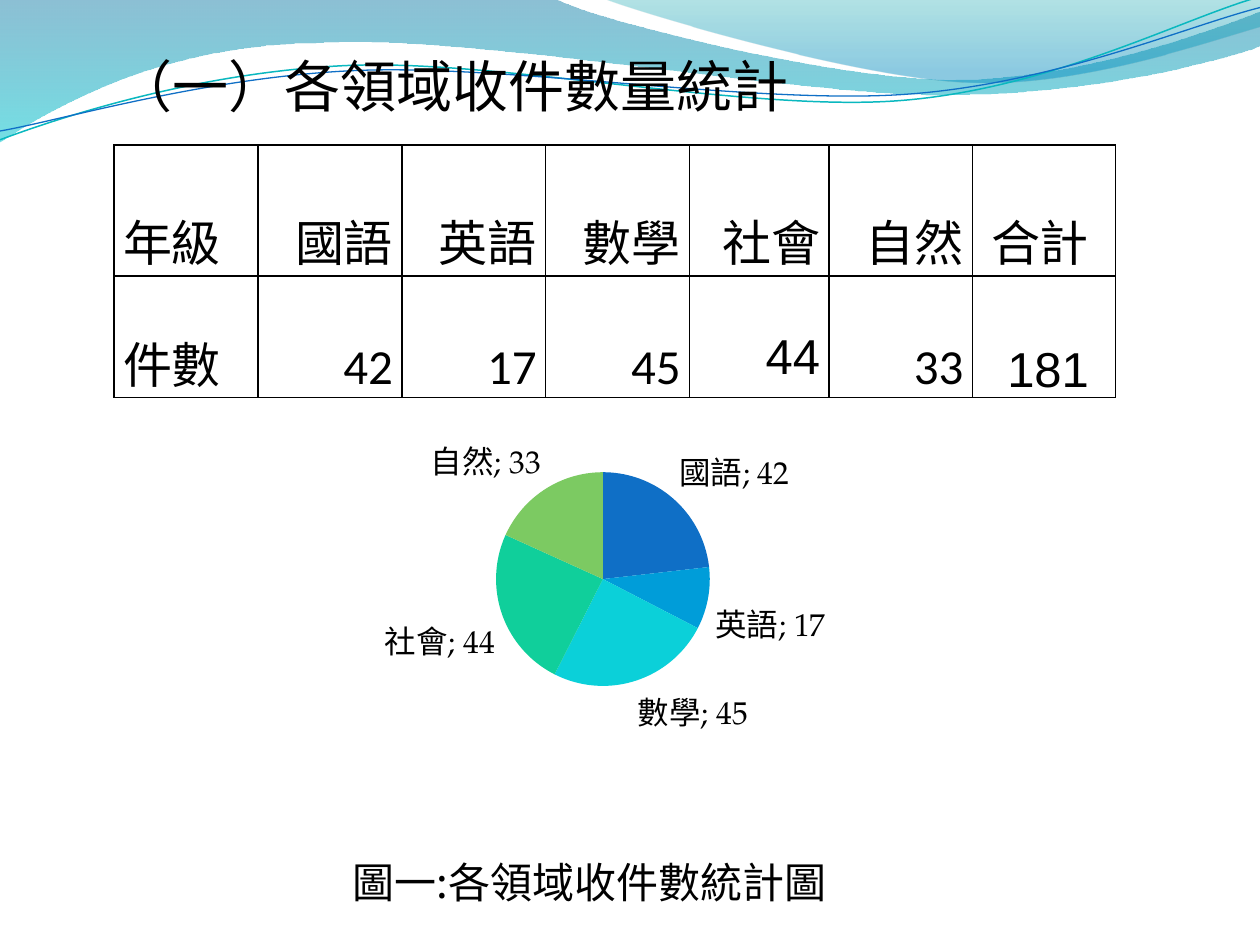
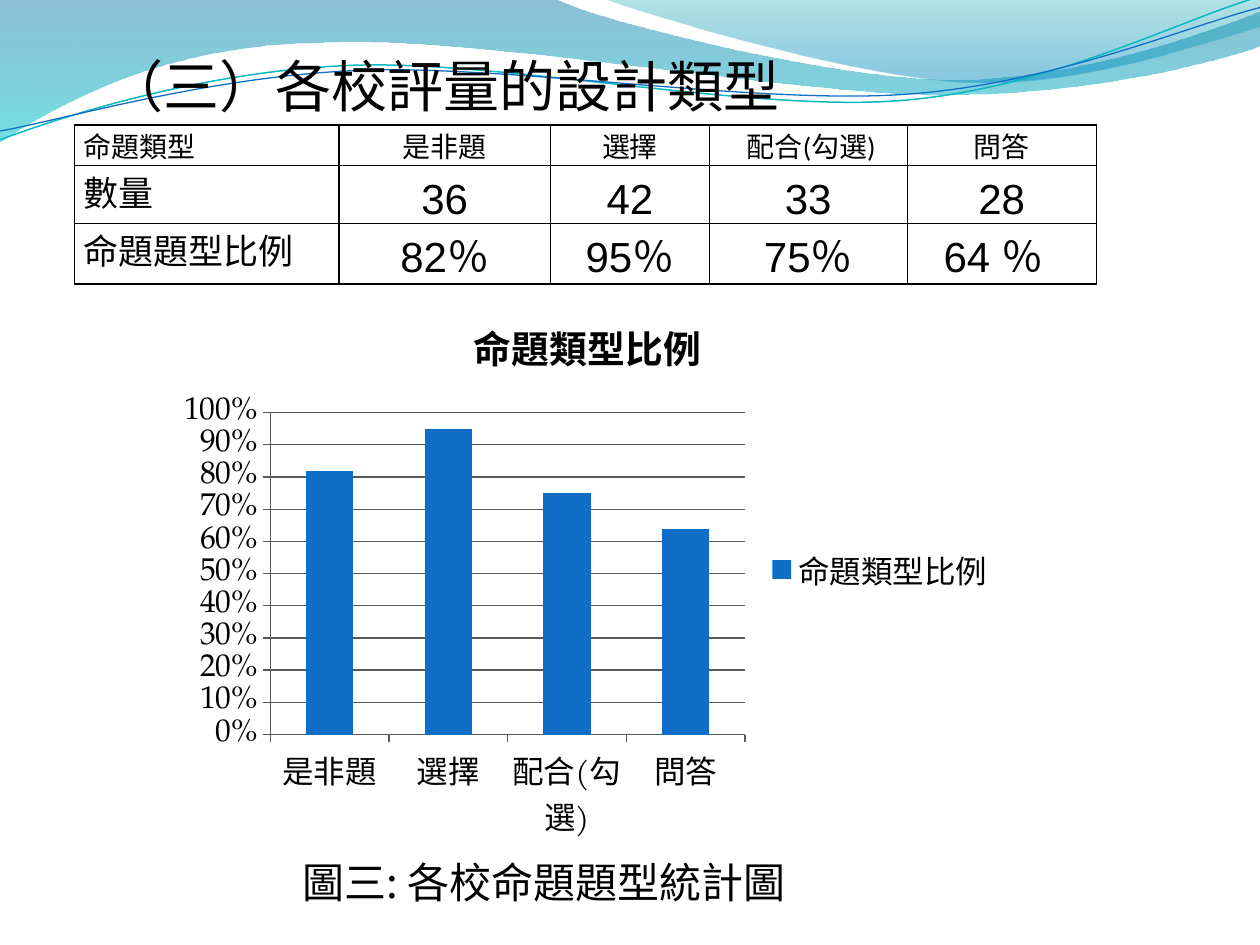
from lxml.etree import SubElement
from pptx import Presentation
from pptx.chart.data import CategoryChartData
from pptx.dml.color import RGBColor
from pptx.enum.chart import XL_CHART_TYPE as ChartType
from pptx.enum.chart import XL_LABEL_POSITION as LabelPos
from pptx.enum.chart import XL_LEGEND_POSITION as LegendPos
from pptx.enum.chart import XL_TICK_MARK as Tick
from pptx.enum.text import MSO_ANCHOR as Anchor
from pptx.enum.text import PP_ALIGN as Align
from pptx.oxml import parse_xml
from pptx.oxml.ns import nsdecls, qn
from pptx.util import Cm, Pt

BLACK = RGBColor(0x00, 0x00, 0x00)
GRID_GREY = RGBColor(0x59, 0x59, 0x59)
BLUE = RGBColor(0x0F, 0x6F, 0xC6)
SKY = RGBColor(0x00, 0x9D, 0xD9)
CYAN = RGBColor(0x0B, 0xD0, 0xD9)
GREEN = RGBColor(0x10, 0xCF, 0x9B)
LIME = RGBColor(0x7C, 0xCA, 0x62)
TEAL_LINE = RGBColor(0x0A, 0xB8, 0xBF)
DEEP_BLUE = RGBColor(0x00, 0x74, 0xA1)
TURQUOISE = RGBColor(0x00, 0xC6, 0xCF)
DEEP_TEAL = RGBColor(0x00, 0xA1, 0xA9)
SEA_BLUE = RGBColor(0x00, 0x8B, 0xBF)

CJK, SANS, BODY, SERIF = "Noto Sans CJK TC", "Arial", "Calibri", "TeX Gyre Pagella"
SLIDE_W, SLIDE_H = 25.4, 19.05
CELL_INSET = 0.18

# Waves in tenths of the slide width: two numbers draw a line, six a curve
BANDS = [
    ([(0, -.01), (4.4, -.01), (4.76, .17, 6.64, .63, 7.58, .63),
      (8.53, .63, 9.58, .26, 10, .09), (10.01, .36),
      (9.83, .44, 8.7, .76, 7.46, .75), (6.22, .75, 3.82, .28, 2.57, .34),
      (1.29, .35, .46, .83, -.01, 1.13)],
     [(0, DEEP_BLUE, 45), (1, TURQUOISE, 55)]),
    ([(4.79, -.01), (5.09, .11, 6.82, .62, 7.69, .65),
      (8.56, .69, 9.61, .32, 10, .21), (10, 0)],
     [(0, DEEP_TEAL, 30), (.8, SEA_BLUE, 45)]),
]
STRANDS = [
    ([(0, 1.11), (.48, .93, 1.58, .57, 2.77, .52),
      (3.95, .47, 5.93, .89, 7.13, .8), (8.33, .71, 9.38, .15, 9.98, -.02)],
     TEAL_LINE, 0.85),
    ([(0, 1.04), (.47, .96, 1.64, .61, 2.83, .56),
      (4.03, .51, 5.97, .83, 7.17, .75), (8.36, .67, 9.41, .21, 10, .06)],
     BLUE, 0.75),
]


def apply(target, formats):
    for name, value in formats.items():
        setattr(target, name, value)


def box_cm(box):
    return [Cm(length) for length in box]


# ---- wave header ----
def add_wave(slide, box, steps, close):
    left, top, width = box
    points = [(Cm(left + x * width / 10), Cm(top + y * width / 10))
              for step in steps for x, y in zip(step[::2], step[1::2])]
    builder = slide.shapes.build_freeform(*points[0])
    builder.add_line_segments(points[1:], close=close)
    wave = builder.convert_to_shape()
    wave.shadow.inherit = False
    # Join each three segments of a curve into one Bezier
    segments = list(wave.element.iter(qn("a:lnTo")))
    for step in steps[1:]:
        count = len(step) // 2
        if count == 3:
            curve = parse_xml(f'<a:cubicBezTo {nsdecls("a")}/>')
            segments[0].addprevious(curve)
            for segment in segments[:count]:
                curve.append(segment[0])
                segment.getparent().remove(segment)
        segments = segments[count:]
    return wave


def add_wave_header(slide, box=(0, 0, SLIDE_W)):
    waves = []
    for steps, stops in BANDS:
        band = add_wave(slide, box, steps, True)
        band.line.fill.background()
        band.fill.gradient()
        band.fill.gradient_angle = 270
        for stop, (position, colour, _) in zip(band.fill.gradient_stops, stops):
            stop.position = position
            stop.color.rgb = colour
        for clr, (_, _, opacity) in zip(band.element.iter(qn("a:srgbClr")), stops):
            SubElement(clr, qn("a:alpha"), val=str(opacity * 1000))
        waves.append(band)
    for steps, colour, weight in STRANDS:
        strand = add_wave(slide, box, steps, False)
        strand.fill.background()
        strand.line.color.rgb = colour
        strand.line.width = Pt(weight)
        waves.append(strand)
    return waves


def share_on_master(master, waves):
    """Move the waves behind everything else on the slide master."""
    tree = master.shapes.element
    for i, wave in enumerate(waves):
        wave.element.nvSpPr.cNvPr.set("id", str(101 + i))
        tree.insert(2 + i, wave.element)


# ---- text ----
def write(paragraph, text, size, font=CJK, align=Align.LEFT):
    paragraph.alignment = align
    run = paragraph.add_run()
    run.text = text
    apply(run.font, {"size": Pt(size), "name": font})
    run.font.color.rgb = BLACK
    SubElement(run._r.get_or_add_rPr(), qn("a:ea"), typeface=CJK)


def add_line_of_text(slide, box, text, size):
    frame = slide.shapes.add_textbox(*box_cm(box)).text_frame
    apply(frame, {"word_wrap": True, "vertical_anchor": Anchor.MIDDLE})
    write(frame.paragraphs[0], text, size)


def add_title(slide, left, text):
    add_line_of_text(slide, (left, 0.82, 18.2, 1.8), text, 32)


def add_caption(slide, left, text):
    add_line_of_text(slide, (left, 17.14, 13, 1.27), text, 24)


# ---- tables ----
def outline(cell):
    properties = cell._tc.get_or_add_tcPr()
    for i, side in enumerate(("lnL", "lnR", "lnT", "lnB")):
        properties.insert(i, parse_xml(
            f'<a:{side} {nsdecls("a")} w="12700"><a:solidFill>'
            f'<a:srgbClr val="{BLACK}"/></a:solidFill></a:{side}>'))


def add_grid(slide, corner, widths, heights, rows, style):
    """style(row, column) gives size, font, alignment and cell formats."""
    box = (*corner, sum(widths), sum(heights))
    grid = slide.shapes.add_table(len(rows), len(widths), *box_cm(box)).table
    apply(grid, {"first_row": False, "horz_banding": False})
    for column, width in zip(grid.columns, widths):
        column.width = Cm(width)
    for row, height in zip(grid.rows, heights):
        row.height = Cm(height)
    for r, texts in enumerate(rows):
        for c, text in enumerate(texts):
            size, font, align, formats = style(r, c)
            cell = grid.cell(r, c)
            apply(cell, {"margin_left": Cm(CELL_INSET), "margin_right": Cm(CELL_INSET),
                         "margin_top": 0, "margin_bottom": 0,
                         "vertical_anchor": Anchor.BOTTOM, **formats})
            write(cell.text_frame.paragraphs[0], text, size, font, align)
            cell.fill.background()
            outline(cell)


def count_style(r, c):
    formats = {}
    if c == 6:
        formats["margin_right"] = Cm(0.54)
    if (r, c) == (1, 4):
        formats["margin_bottom"] = Cm(0.26)
    font = SANS if r == 1 and c in (4, 6) else BODY
    return 28, font, Align.RIGHT if c else Align.LEFT, formats


def type_style(r, c):
    if c == 0:
        return 20 if r else 16, CJK, Align.LEFT, {"vertical_anchor": Anchor.TOP}
    formats = {(0, 3): {"margin_left": Cm(0.3)},
               (2, 4): {"margin_right": Cm(0.5)}}.get((r, c), {})
    return (24, SANS, Align.CENTER, formats) if r else (16, BODY, Align.CENTER, formats)


# ---- charts ----
def add_data_chart(slide, kind, box, plot_box, series_name, names, values, number_format):
    """plot_box is measured in cm from the corner of the chart box."""
    data = CategoryChartData(number_format=number_format)
    data.categories = names
    data.add_series(series_name, values)
    chart = slide.shapes.add_chart(kind, *box_cm(box), data).chart
    apply(chart.font, {"size": Pt(18), "name": SERIF})
    chart.font.color.rgb = BLACK
    area = chart.element.find(".//" + qn("c:plotArea"))
    for old in area.findall(qn("c:layout")):
        area.remove(old)
    places = "".join(f'<c:{key} val="{length / whole}"/>'
                     for key, length, whole in zip("xywh", plot_box, box[2:] * 2))
    area.insert(0, parse_xml(
        f'<c:layout {nsdecls("c")}><c:manualLayout><c:layoutTarget val="inner"/>'
        f'<c:xMode val="edge"/><c:yMode val="edge"/>{places}'
        '</c:manualLayout></c:layout>'))
    return chart


def add_subject_pie(slide, box, names, values):
    chart = add_data_chart(slide, ChartType.PIE, box, (7.69, 1.19, 4.31, 4.31),
                           "Series 1", names, values, "General")
    apply(chart, {"has_legend": False, "has_title": False})
    chart.plots[0].vary_by_categories = True
    pieces = chart.plots[0].series[0]
    for i, colour in enumerate((BLUE, SKY, CYAN, GREEN, LIME)):
        fill = pieces.points[i].format.fill
        fill.solid()
        fill.fore_color.rgb = colour
    apply(pieces.data_labels,
          {"show_value": True, "show_category_name": True,
           "show_percentage": False, "position": LabelPos.OUTSIDE_END})
    last_flag = chart.element.find(".//" + qn("c:showBubbleSize"))
    last_flag.addnext(parse_xml(f'<c:separator {nsdecls("c")}>; </c:separator>'))


def add_ratio_columns(slide, box, heading, names, values):
    chart = add_data_chart(slide, ChartType.COLUMN_CLUSTERED, box,
                           (2.07, 2.48, 9.57, 6.49), heading, names, values, "0%")
    # Heading and legend
    title = chart.chart_title.text_frame
    title.text = heading
    title_font = title.paragraphs[0].runs[0].font
    apply(title_font, {"size": Pt(21.6), "bold": True, "name": SERIF})
    title_font.color.rgb = BLACK
    chart.has_legend = True
    apply(chart.legend, {"position": LegendPos.RIGHT, "include_in_layout": False})
    # Columns
    plot = chart.plots[0]
    apply(plot, {"gap_width": 150, "vary_by_categories": False})
    fill = plot.series[0].format.fill
    fill.solid()
    fill.fore_color.rgb = BLUE
    # Axes
    scale = chart.value_axis
    apply(scale, {"minimum_scale": 0, "maximum_scale": 1, "major_unit": 0.1,
                  "has_major_gridlines": True})
    apply(scale.tick_labels, {"number_format": "0%", "number_format_is_linked": False})
    for axis in (scale, chart.category_axis):
        apply(axis, {"major_tick_mark": Tick.OUTSIDE, "minor_tick_mark": Tick.NONE})
        axis.format.line.color.rgb = GRID_GREY
    scale.major_gridlines.format.line.color.rgb = GRID_GREY


# ---- slides ----
def build_subject_slide(slide):
    subjects, counts = ["國語", "英語", "數學", "社會", "自然"], [42, 17, 45, 44, 33]
    rows = [["年級", *subjects, "合計"],
            ["件數", *map(str, counts), str(sum(counts))]]
    add_grid(slide, (2.3, 2.92), [2.9] * 4 + [2.81] + [2.89] * 2, [2.64, 2.45],
             rows, count_style)
    add_title(slide, 2.1, "（一）各領域收件數量統計")
    add_caption(slide, 6.86, "圖一:各領域收件數統計圖")
    add_subject_pie(slide, (2.31, 8.33, 19.81, 6.83), subjects, counts)


def build_type_slide(slide):
    types, ratios = ["是非題", "選擇", "配合(勾選)", "問答"], [0.82, 0.95, 0.75, 0.64]
    rows = [["命題類型", *types],
            ["數量", "36", "42", "33", "28"],
            ["命題題型比例", "82％", "95％", "75％", "64 ％"]]
    add_grid(slide, (1.5, 2.52), [5.33, 4.27, 3.2, 3.99, 3.81], [0.82, 1.17, 1.22],
             rows, type_style)
    add_title(slide, 1.91, "（三）各校評量的設計類型")
    add_caption(slide, 5.85, "圖三: 各校命題題型統計圖")
    add_ratio_columns(slide, (3.38, 5.84, 16.94, 11.28), "命題類型比例", types, ratios)


def main():
    deck = Presentation()
    apply(deck, {"slide_width": Cm(SLIDE_W), "slide_height": Cm(SLIDE_H)})
    blank = deck.slide_layouts[6]
    subject_slide, type_slide = (deck.slides.add_slide(blank) for _ in range(2))
    share_on_master(deck.slide_master, add_wave_header(subject_slide))
    build_subject_slide(subject_slide)
    build_type_slide(type_slide)
    deck.save("out.pptx")


if __name__ == "__main__":
    main()
